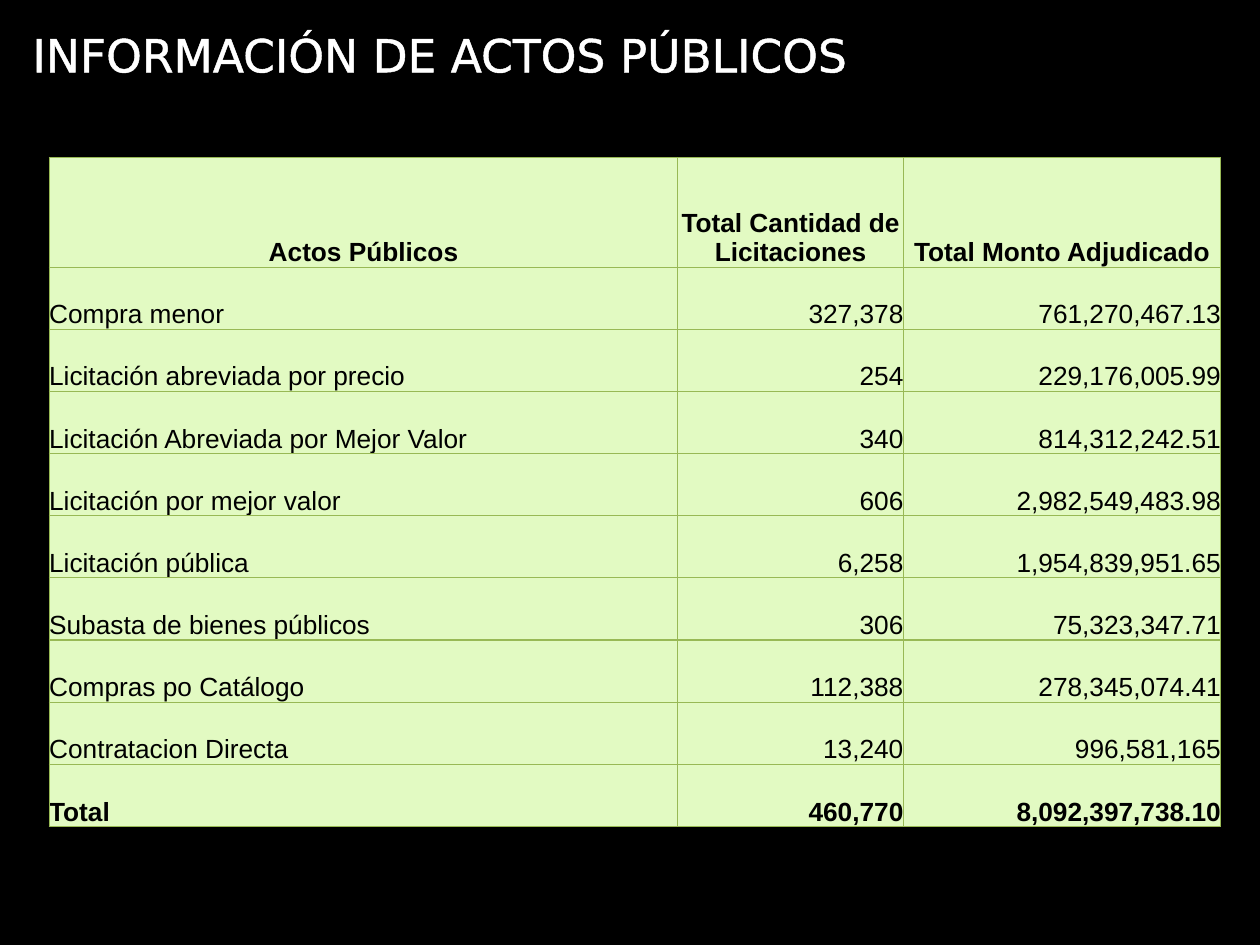
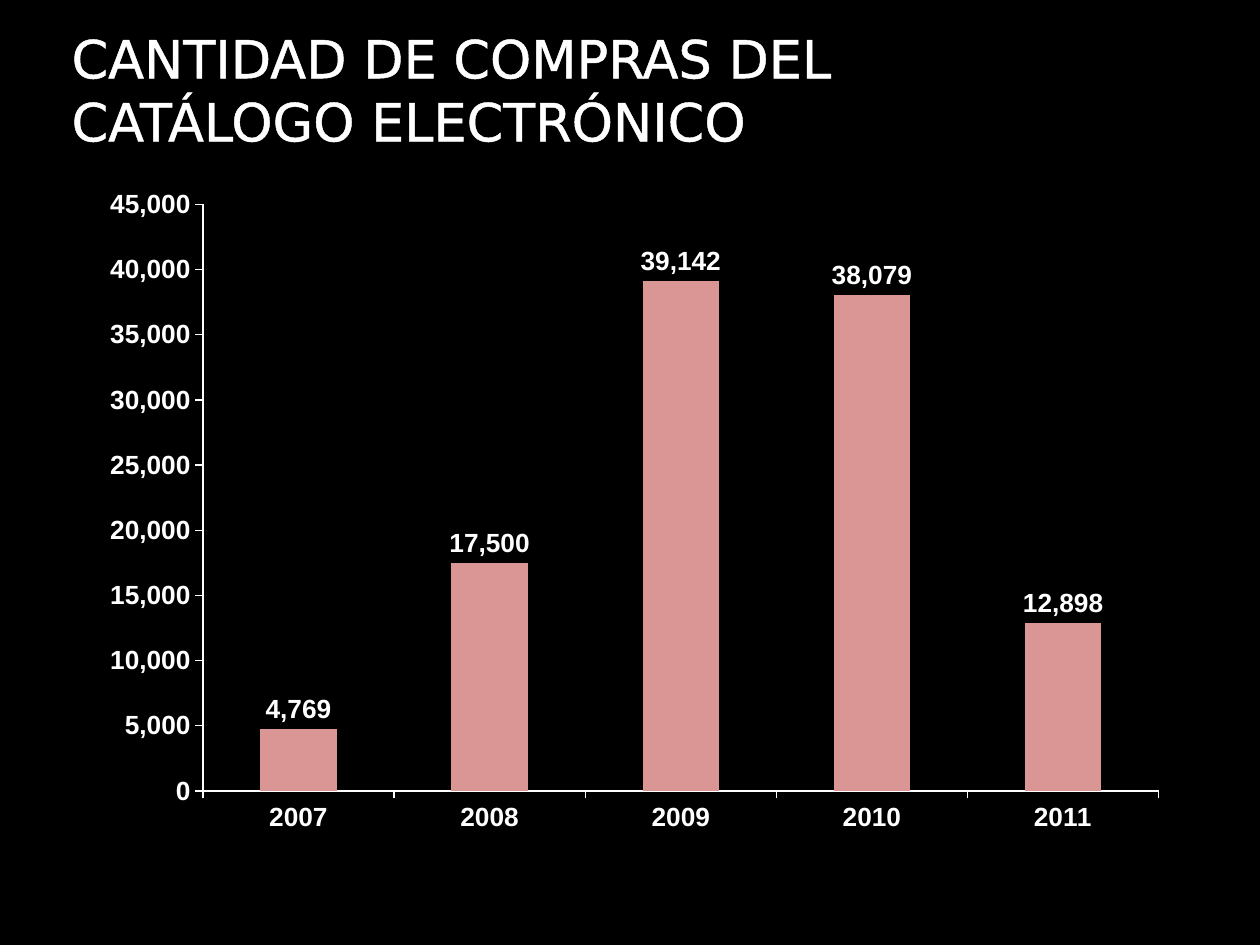
from lxml.etree import SubElement
from pptx import Presentation
from pptx.chart.data import CategoryChartData
from pptx.dml.color import RGBColor
from pptx.enum.chart import XL_CHART_TYPE, XL_LABEL_POSITION, XL_TICK_MARK
from pptx.enum.text import MSO_ANCHOR, PP_ALIGN
from pptx.oxml import parse_xml
from pptx.oxml.ns import nsdecls, qn
from pptx.util import Inches, Pt

BLACK = RGBColor(0x00, 0x00, 0x00)
WHITE = RGBColor(0xFF, 0xFF, 0xFF)
CELL_GREEN = RGBColor(0xE2, 0xFA, 0xC2)
BORDER_GREEN = RGBColor(0x98, 0xB9, 0x55)
BAR_PINK = RGBColor(0xD9, 0x96, 0x94)
TITLE_FONT = "DejaVu Sans"
BODY_FONT = "Arial"
BODY_SIZE = Pt(15)


def outline_xml(tag, width, color):
    return parse_xml(
        f'<a:{tag} {nsdecls("a")} w="{int(width)}"><a:solidFill>'
        f'<a:srgbClr val="{color}"/></a:solidFill></a:{tag}>'
    )


def add_titled_slide(title, left, top, width, height, size):
    slide = presentation.slides.add_slide(presentation.slide_layouts[6])
    slide.background.fill.solid()
    slide.background.fill.fore_color.rgb = BLACK
    title_box = slide.shapes.add_textbox(
        Inches(left), Inches(top), Inches(width), Inches(height))
    frame = title_box.text_frame
    frame.word_wrap = True
    frame.vertical_anchor = MSO_ANCHOR.MIDDLE
    run = frame.paragraphs[0].add_run()
    run.text = title
    run.font.name = TITLE_FONT
    run.font.size = Pt(size)
    run.font.color.rgb = WHITE
    run.font._element.insert(0, outline_xml("ln", Pt(1.45), WHITE))
    return slide


presentation = Presentation()
presentation.slide_width = Inches(10)
presentation.slide_height = Inches(7.5)

# Slide 1: table of public tenders
slide = add_titled_slide("INFORMACIÓN DE ACTOS PÚBLICOS", 0.16, 0, 8.53, 0.86, 26)
rows = [
    ("Actos Públicos", "Total Cantidad de Licitaciones", "Total Monto Adjudicado"),
    ("Compra menor", "327,378", "761,270,467.13"),
    ("Licitación abreviada por precio", "254", "229,176,005.99"),
    ("Licitación Abreviada por Mejor Valor", "340", "814,312,242.51"),
    ("Licitación por mejor valor", "606", "2,982,549,483.98"),
    ("Licitación pública", "6,258", "1,954,839,951.65"),
    ("Subasta de bienes públicos", "306", "75,323,347.71"),
    ("Compras po Catálogo", "112,388", "278,345,074.41"),
    ("Contratacion Directa", "13,240", "996,581,165"),
    ("Total", "460,770", "8,092,397,738.10"),
]
column_widths = [4.99, 1.79, 2.52]
table_height, header_height = 5.31, 0.87
body_height = (table_height - header_height) / (len(rows) - 1)
table = slide.shapes.add_table(
    len(rows), len(column_widths), Inches(0.39), Inches(1.25),
    Inches(sum(column_widths)), Inches(table_height)).table
for column, width in zip(table.columns, column_widths):
    column.width = Inches(width)

for row_index, values in enumerate(rows):
    is_header = row_index == 0
    table.rows[row_index].height = Inches(header_height if is_header else body_height)
    for column_index, value in enumerate(values):
        cell = table.cell(row_index, column_index)
        cell.text = value
        cell.vertical_anchor = MSO_ANCHOR.BOTTOM
        cell.margin_left = cell.margin_right = 0
        cell.margin_top = cell.margin_bottom = 0
        properties = cell._tc.get_or_add_tcPr()
        for side in ("lnL", "lnR", "lnT", "lnB"):
            properties.append(outline_xml(side, Pt(0.75), BORDER_GREEN))
        cell.fill.solid()
        cell.fill.fore_color.rgb = CELL_GREEN
        paragraph = cell.text_frame.paragraphs[0]
        if is_header:
            paragraph.alignment = PP_ALIGN.CENTER
        else:
            paragraph.alignment = PP_ALIGN.RIGHT if column_index else PP_ALIGN.LEFT
        paragraph.font.name = BODY_FONT
        paragraph.font.size = BODY_SIZE
        paragraph.font.bold = is_header or row_index == len(rows) - 1
        paragraph.font.color.rgb = BLACK

# Slide 2: column chart of catalogue purchases
slide = add_titled_slide(
    "CANTIDAD DE COMPRAS DEL CATÁLOGO ELECTRÓNICO", 0.47, 0.08, 8.03, 1.25, 30)
chart_data = CategoryChartData(number_format="#,##0")
chart_data.categories = ["2007", "2008", "2009", "2010", "2011"]
chart_data.add_series("Series 1", [4769, 17500, 39142, 38079, 12898])
chart = slide.shapes.add_chart(
    XL_CHART_TYPE.COLUMN_CLUSTERED, Inches(0.7), Inches(1.41),
    Inches(8.67), Inches(5.31), chart_data).chart
chart.has_title = False
chart.has_legend = False
chart.font.name = BODY_FONT
chart.font.size = BODY_SIZE
chart.font.bold = True
chart.font.color.rgb = WHITE

for axis in (chart.category_axis, chart.value_axis):
    axis.has_major_gridlines = False
    axis.major_tick_mark = XL_TICK_MARK.OUTSIDE
    axis.minor_tick_mark = XL_TICK_MARK.NONE
    axis.format.line.color.rgb = WHITE
    axis.format.line.width = Pt(0.75)
chart.value_axis.minimum_scale = 0
chart.value_axis.maximum_scale = 45000
chart.value_axis.major_unit = 5000
chart.value_axis.tick_labels.number_format = "#,##0"
chart.value_axis.tick_labels.number_format_is_linked = False

plot = chart.plots[0]
plot.vary_by_categories = False
plot.gap_width = 150
series_fill = plot.series[0].format.fill
series_fill.solid()
series_fill.fore_color.rgb = BAR_PINK
plot.has_data_labels = True
labels = plot.data_labels
labels.show_value = True
labels.number_format = "#,##0"
labels.number_format_is_linked = False
labels.position = XL_LABEL_POSITION.OUTSIDE_END
labels.font.name = BODY_FONT
labels.font.size = BODY_SIZE
labels.font.bold = True
labels.font.color.rgb = WHITE

plot_area = chart._chartSpace.chart.plotArea
for old_layout in plot_area.findall(qn("c:layout")):
    plot_area.remove(old_layout)
layout = SubElement(plot_area, qn("c:layout"))
plot_area.insert(0, layout)
manual_layout = SubElement(layout, qn("c:manualLayout"))
for name, value in [("layoutTarget", "inner"), ("xMode", "edge"), ("yMode", "edge"),
                    ("x", "0.105"), ("y", "0.04"), ("w", "0.875"), ("h", "0.877")]:
    SubElement(manual_layout, qn(f"c:{name}")).set("val", value)

presentation.save("out.pptx")
